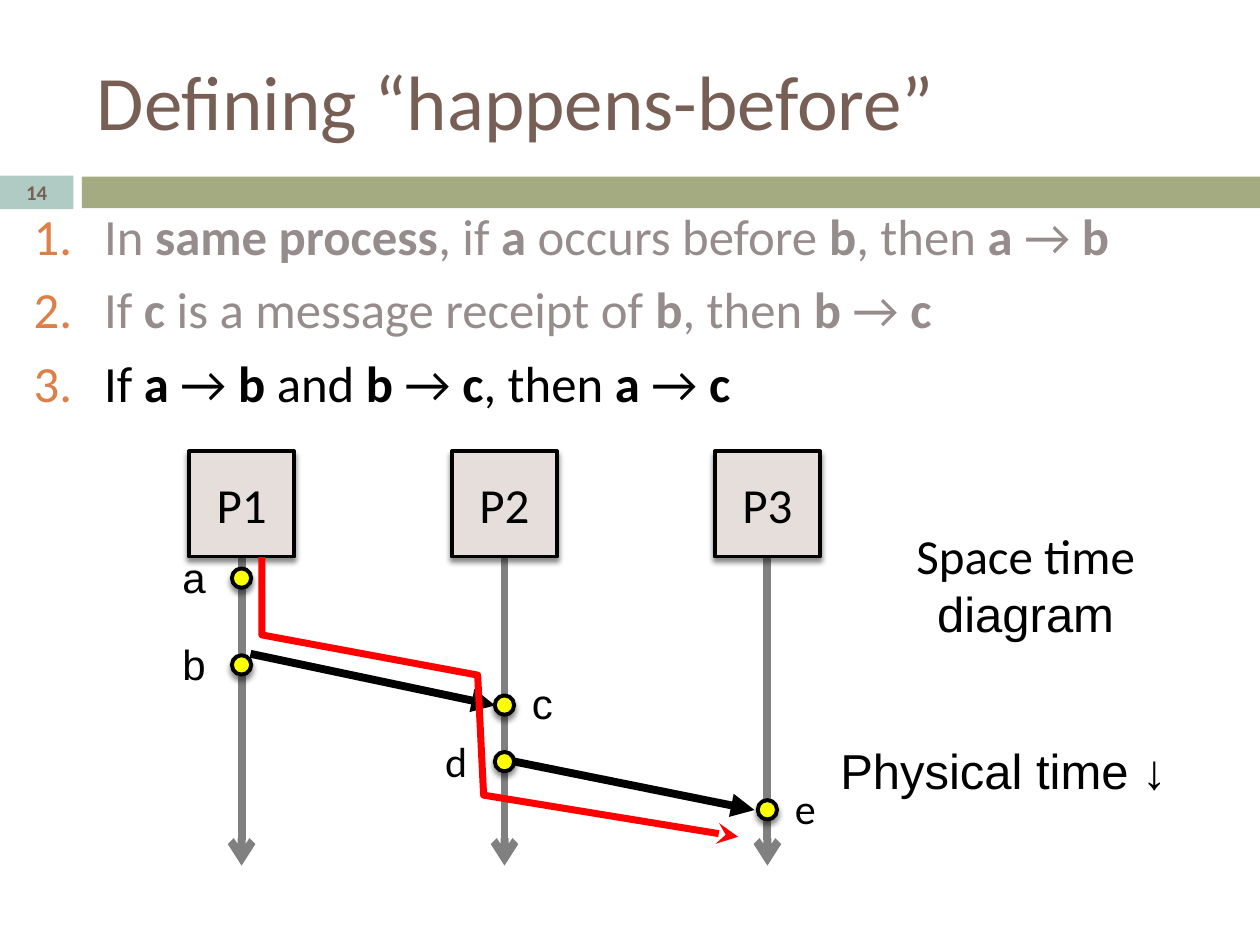
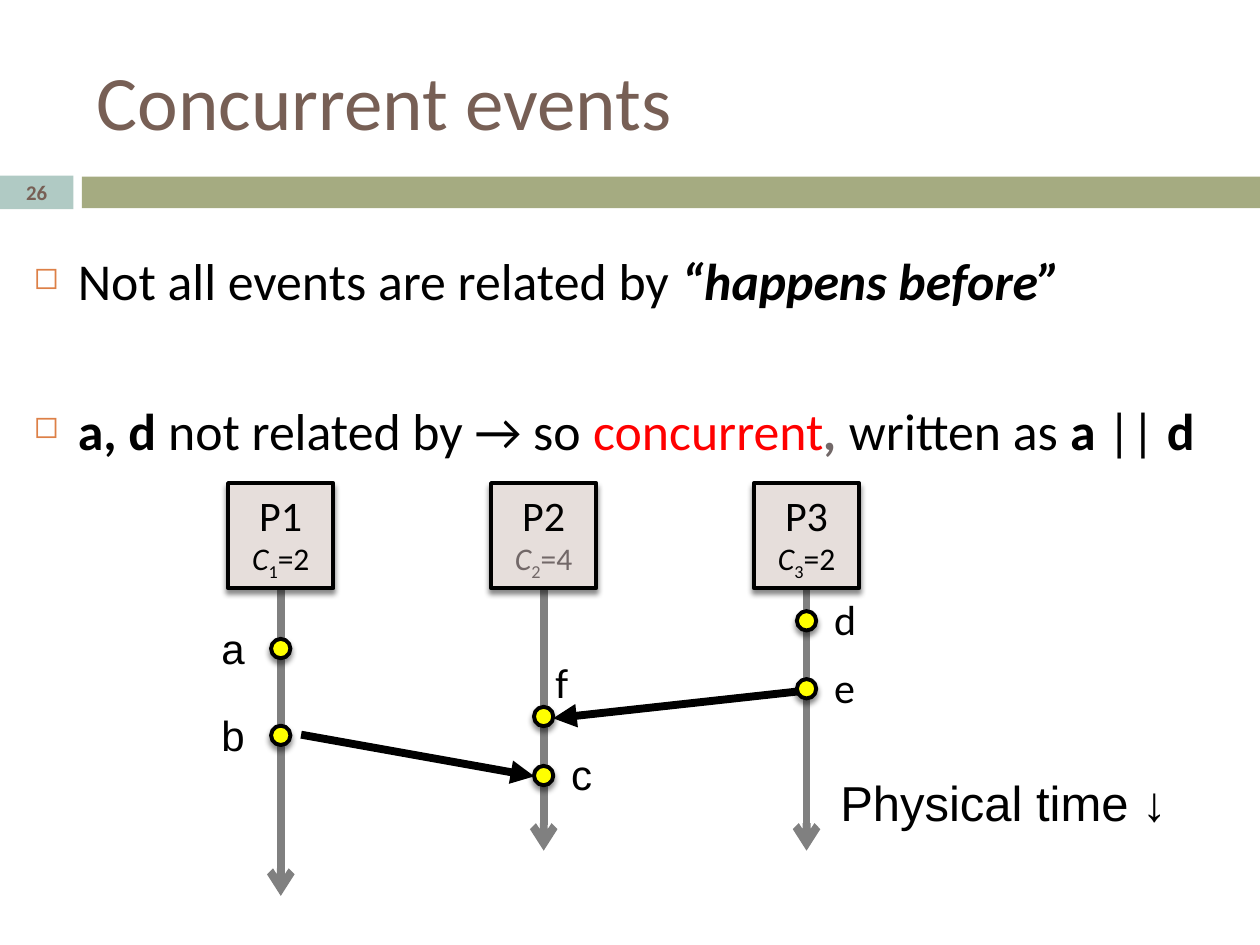
from lxml import etree
from pptx import Presentation
from pptx.dml.color import RGBColor
from pptx.enum.shapes import MSO_CONNECTOR, MSO_SHAPE
from pptx.enum.text import MSO_ANCHOR, PP_ALIGN
from pptx.oxml.ns import qn
from pptx.util import Cm, Pt

RECT = MSO_SHAPE.RECTANGLE
PROCESS = MSO_SHAPE.FLOWCHART_PROCESS
OVAL = MSO_SHAPE.OVAL
STRAIGHT = MSO_CONNECTOR.STRAIGHT
CENTER = PP_ALIGN.CENTER
MIDDLE = MSO_ANCHOR.MIDDLE

COLORS = {
    "title": "775F55", "band": "A5AB81", "number": "B0CAC4", "bullet": "DD8047",
    "black": "000000", "faded": "968C8C", "muted": "726868", "red": "FF0000",
    "process": "E6DEDB", "event": "FFFF00", "lifeline": "808080",
}
PITCH = 5.3
BOX = 2.12
DOT = 0.39
LABEL_OFFSETS = {"left": (-1.25, -0.46), "right": (0.5, -0.48), "above": (0.18, -1.14)}

SLIDES = [
    {
        "title": "Defining “happens-before”",
        "number": "14",
        "body": {"top": 4.01, "size": 29, "hang": 1.42, "gap": 7, "bullet": "number"},
        "bullets": [
            [("In *same process*, if *a* occurs before *b*, then *a *→ *b*", "faded", False)],
            [("If *c* is a message receipt of *b*, then *b* → *c*", "faded", False)],
            [("If *a* → *b* and *b* → *c*, then *a* → *c*", "black", False)],
        ],
        "origin": (3.81, 9.1),
        "name_size": 28,
        "clocks": [],
        "line_ends": [17.45, 17.45, 17.45],
        "messages": [(5.05, 13.18, 9.98, 14.22), (10.06, 15.29, 15.21, 16.33)],
        "events": [("a", 0, 11.46, "left"), ("b", 0, 13.21, "left"), ("c", 1, 14.02, "right"),
                   ("d", 1, 15.16, "left"), ("e", 2, 16.13, "right")],
        "causal_path": [(5.28, 11.23), (5.28, 12.8), (9.63, 13.61), (9.75, 16.03), (14.88, 16.87)],
        "captions": [
            (16.69, 14.81, 7.67, 1.45, [("Physical time ↓", "Arial")]),
            (17.78, 10.46, 5.79, 2.64, [("Space time", "Calibri"), ("diagram", "Arial")]),
        ],
    },
    {
        "title": "Concurrent events",
        "number": "26",
        "body": {"top": 4.89, "size": 29.6, "hang": 0.89, "gap": 50, "bullet": "square"},
        "bullets": [
            [("Not all events are related by ", "black", False),
             ("*“happens before”*", "black", True)],
            [("*a, d* not related by → so ", "black", False), ("concurrent", "red", False),
             ("*, *", "muted", True), ("written as *a* || *d*", "black", False)],
        ],
        "origin": (4.6, 9.74),
        "name_size": 24,
        "clocks": [("2", "black"), ("4", "muted"), ("2", "black")],
        "line_ends": [18.06, 17.15, 17.15],
        "messages": [(6.07, 14.81, 10.77, 15.65), (16.08, 13.94, 11.15, 14.48)],
        "events": [("a", 0, 12.88, "left"), ("b", 0, 14.63, "left"), ("c", 1, 15.44, "right"),
                   ("d", 2, 12.32, "right"), ("e", 2, 13.69, "right"), ("f", 1, 14.25, "above")],
        "causal_path": [],
        "captions": [(16.69, 15.44, 7.67, 1.45, [("Physical time ↓", "Arial")])],
    },
]


def write(p, text, size, color="black", font="Calibri", italic=False, base=None):
    for i, part in enumerate(text.split("*")):
        if part:
            r = p.add_run()
            r.text = part
            r.font.name = font
            r.font.size = Pt(size)
            r.font.bold = i % 2 == 1
            r.font.italic = italic
            r.font.color.rgb = RGBColor.from_string(COLORS[color])
            if base:
                r.font._element.set("baseline", str(base))


def style(s, fill=None, line=None, width=2.25, arrow=None, shadow=False):
    if fill:
        s.fill.solid()
        s.fill.fore_color.rgb = RGBColor.from_string(COLORS[fill])
    if line:
        s.line.color.rgb = RGBColor.from_string(COLORS[line])
        s.line.width = Pt(width)
    else:
        s.line.fill.background()
    spPr = s._element.spPr
    if arrow:
        etree.SubElement(spPr.find(qn("a:ln")), qn("a:tailEnd"), type=arrow)
    effects = etree.SubElement(spPr, qn("a:effectLst"))
    if shadow:
        outer = etree.SubElement(effects, qn("a:outerShdw"), blurRad=str(Pt(3)),
                                 dist=str(Pt(2.4)), dir="5400000", rotWithShape="0")
        color = etree.SubElement(outer, qn("a:srgbClr"), val=COLORS["black"])
        etree.SubElement(color, qn("a:alpha"), val="45000")


prs = Presentation()
prs.slide_width = Cm(25.4)
prs.slide_height = Cm(19.05)

for data in SLIDES:
    slide = prs.slides.add_slide(prs.slide_layouts[6])
    shapes = slide.shapes

    s = shapes.add_shape(RECT, Cm(1.65), Cm(3.56), Cm(23.75), Cm(0.64))
    style(s, fill="band")
    s = shapes.add_shape(RECT, Cm(0), Cm(3.54), Cm(1.48), Cm(0.68))
    style(s, fill="number")
    s.text_frame.vertical_anchor = MIDDLE
    p = s.text_frame.paragraphs[0]
    p.alignment = CENTER
    write(p, f"*{data['number']}*", 11.9, "title")

    tf = shapes.add_textbox(Cm(1.7), Cm(0.64), Cm(22.66), Cm(2.74)).text_frame
    tf.word_wrap = True
    tf.vertical_anchor = MIDDLE
    write(tf.paragraphs[0], data["title"], 44, "title")

    body = data["body"]
    tf = shapes.add_textbox(Cm(0.43), Cm(body["top"]), Cm(24.77), Cm(4.5)).text_frame
    tf.word_wrap = True
    for i, runs in enumerate(data["bullets"]):
        p = tf.add_paragraph() if i else tf.paragraphs[0]
        p.space_before = Pt(body["gap"] if i else 0)
        pPr = p._p.get_or_add_pPr()
        pPr.set("marL", str(Cm(body["hang"])))
        pPr.set("indent", str(-Cm(body["hang"])))
        color = etree.SubElement(pPr, qn("a:buClr"))
        etree.SubElement(color, qn("a:srgbClr"), val=COLORS["bullet"])
        if body["bullet"] == "number":
            etree.SubElement(pPr, qn("a:buAutoNum"), type="arabicPeriod")
        else:
            etree.SubElement(pPr, qn("a:buSzPct"), val="60000")
            etree.SubElement(pPr, qn("a:buChar"), char="◻")
        for text, run_color, italic in runs:
            write(p, text, body["size"], run_color, italic=italic)

    left, top = data["origin"]
    axes = [left + BOX / 2 + i * PITCH for i in range(3)]
    lines = [(x, top + BOX, x, end, "lifeline", "arrow")
             for x, end in zip(axes, data["line_ends"])]
    lines += [(*message, "black", "triangle") for message in data["messages"]]
    for x1, y1, x2, y2, color, arrow in lines:
        s = shapes.add_connector(STRAIGHT, Cm(x1), Cm(y1), Cm(x2), Cm(y2))
        style(s, line=color, width=4.5, arrow=arrow)

    for i, x in enumerate(axes):
        s = shapes.add_shape(PROCESS, Cm(x - BOX / 2), Cm(top), Cm(BOX), Cm(BOX))
        style(s, fill="process", line="black", shadow=True)
        tf = s.text_frame
        tf.vertical_anchor = MIDDLE
        p = tf.paragraphs[0]
        p.alignment = CENTER
        write(p, f"P{i + 1}", data["name_size"])
        if data["clocks"]:
            value, color = data["clocks"][i]
            p = tf.add_paragraph()
            p.alignment = CENTER
            write(p, "C", 18, color, italic=True)
            write(p, str(i + 1), 18, color, base=-25000)
            write(p, f"={value}", 18, color)

    for name, process, y, side in data["events"]:
        x = axes[process] - DOT / 2
        s = shapes.add_shape(OVAL, Cm(x), Cm(y), Cm(DOT), Cm(DOT))
        style(s, fill="event", line="black", shadow=True)
        dx, dy = LABEL_OFFSETS[side]
        tf = shapes.add_textbox(Cm(x + dx), Cm(y + dy), Cm(1), Cm(1.27)).text_frame
        tf.word_wrap = False
        write(tf.paragraphs[0], name, 24, font="Calibri" if name in "def" else "Arial")

    if data["causal_path"]:
        points = [(Cm(x), Cm(y)) for x, y in data["causal_path"]]
        builder = shapes.build_freeform(*points[0])
        builder.add_line_segments(points[1:], close=False)
        s = builder.convert_to_shape()
        s.fill.background()
        style(s, line="red", width=4, arrow="stealth")

    for x, y, width, height, rows in data["captions"]:
        tf = shapes.add_textbox(Cm(x), Cm(y), Cm(width), Cm(height)).text_frame
        tf.word_wrap = False
        for i, (text, font) in enumerate(rows):
            p = tf.add_paragraph() if i else tf.paragraphs[0]
            if len(rows) > 1:
                p.alignment = CENTER
            write(p, text, 28, font=font)

prs.save("out.pptx")
